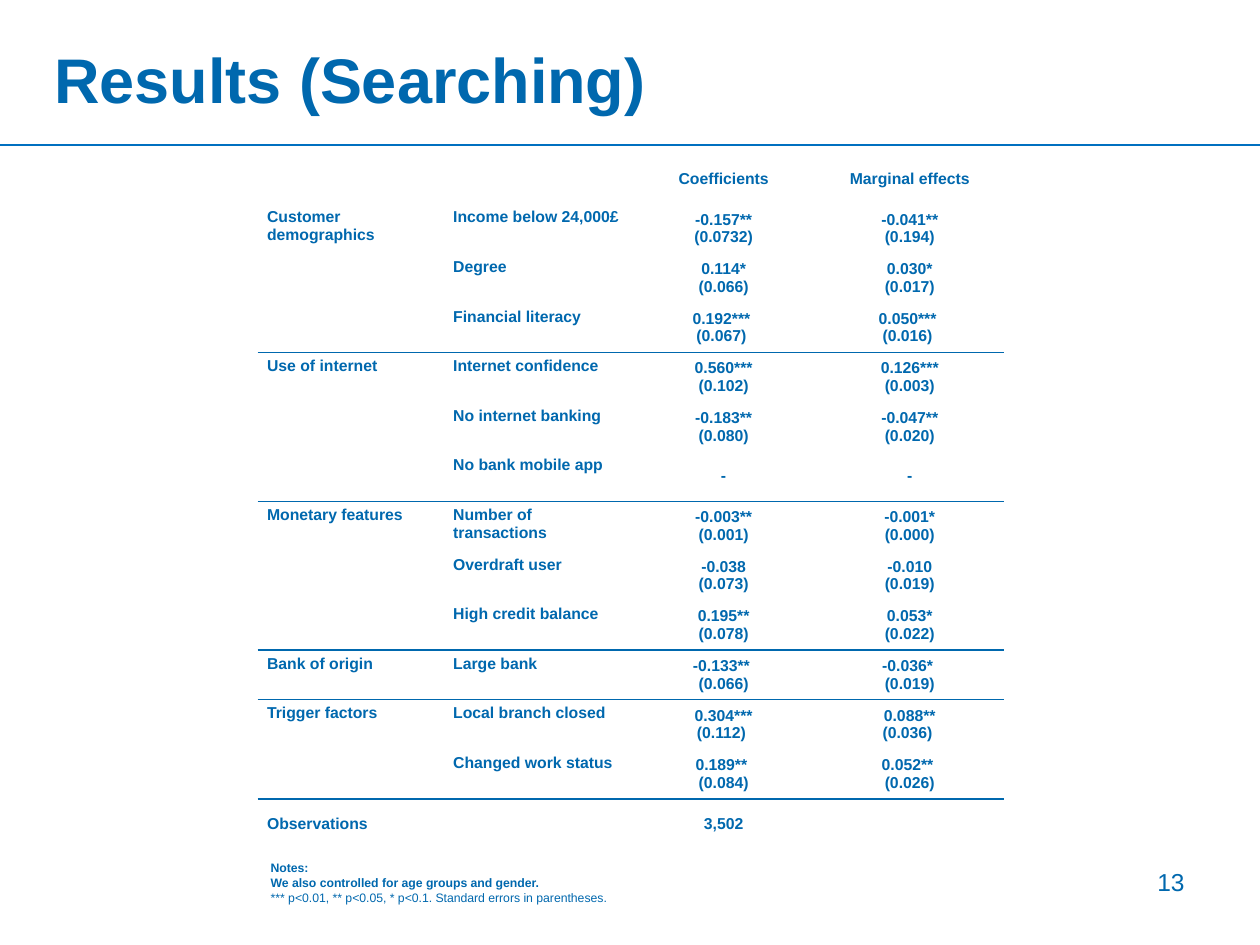
from itertools import accumulate

from lxml import etree
from pptx import Presentation
from pptx import util as u
from pptx.dml.color import RGBColor
from pptx.enum import shapes, text
from pptx.oxml import ns

BLUE = RGBColor(0x00, 0x68, 0xAE)
RULE = RGBColor(0x00, 0x70, 0xC0)
WHITE = RGBColor(0xFF, 0xFF, 0xFF)
FONT = "Arial"
WIDE, HIGH = u.Inches(10), u.Inches(7.5)
LEFT, MID, RIGHT = text.PP_ALIGN.LEFT, text.PP_ALIGN.CENTER, text.PP_ALIGN.RIGHT

HEADS = ["", "", "Coefficients", "Marginal effects"]
GROUPS = [
    ("Customer demographics", [
        ("Income below 24,000£", "-0.157**\n(0.0732)", "-0.041**\n(0.194)"),
        ("Degree", "0.114*\n(0.066)", "0.030*\n(0.017)"),
        ("Financial literacy", "0.192*** \n(0.067) ", "0.050*** \n(0.016) "),
    ]),
    ("Use of internet", [
        ("Internet confidence", "0.560***\n(0.102)", "0.126***\n(0.003)"),
        ("No internet banking", "-0.183**\n(0.080)", "-0.047**\n(0.020)"),
        ("No bank mobile app", "-", "-"),
    ]),
    ("Monetary features", [
        ("Number of transactions", "-0.003**\n(0.001)", "-0.001*\n(0.000)"),
        ("Overdraft user", "-0.038\n(0.073)", "-0.010\n(0.019)"),
        ("High credit balance", "0.195**\n(0.078)", "0.053*\n(0.022)"),
    ]),
    ("Bank of origin", [
        ("Large bank", "-0.133** \n(0.066)", "-0.036* \n(0.019)"),
    ]),
    ("Trigger factors", [
        ("Local branch closed", "0.304***\n(0.112) ", "0.088**\n(0.036) "),
        ("Changed work status", "0.189** \n(0.084)", "0.052** \n(0.026)"),
    ]),
    ("Observations", [("", "3,502", "")]),
]
NOTES = [
    "Notes:",
    "We also controlled for age groups and gender.",
    "*** p<0.01, ** p<0.05, * p<0.1. Standard errors in parentheses.",
]


def share(x, y, w, h):
    return int(x * WIDE), int(y * HIGH), int(w * WIDE), int(h * HIGH)


def style(frame, size, bold, align):
    for para in frame.paragraphs:
        para.alignment = align
        for run in para.runs:
            font = run.font
            font.name, font.size, font.bold = FONT, u.Pt(size), bold
            font.color.rgb = BLUE


def edge(cell, side, color):
    props = cell._tc.get_or_add_tcPr()
    line = etree.SubElement(props, ns.qn("a:ln" + side), w=str(u.Pt(1)))
    fill = etree.SubElement(line, ns.qn("a:solidFill"))
    etree.SubElement(fill, ns.qn("a:srgbClr"), val=str(color))


def add_title(slide, box):
    title = slide.shapes.title
    title.left, title.top, title.width, title.height = box
    frame = title.text_frame
    frame.text = "Results (Searching)"
    frame.vertical_anchor = text.MSO_ANCHOR.MIDDLE
    style(frame, 36, True, LEFT)


def add_rule(slide, y):
    line = slide.shapes.add_connector(
        shapes.MSO_CONNECTOR.STRAIGHT, 0, y, WIDE, y)
    line.line.color.rgb = RULE
    line.line.width = u.Pt(0.75)
    etree.SubElement(line._element.spPr, ns.qn("a:effectLst"))


def fill_cell(cell, words, mid, align, top, base):
    cell.margin_left = cell.margin_right = u.Inches(0.07)
    cell.margin_top = cell.margin_bottom = u.Inches(0.04)
    cell.vertical_anchor = (
        text.MSO_ANCHOR.MIDDLE if mid else text.MSO_ANCHOR.TOP)
    cell.text_frame.text = words
    style(cell.text_frame, 9, True, align)
    for side, color in zip("LRTB", (WHITE, WHITE, top, base)):
        edge(cell, side, color)
    cell.fill.solid()
    cell.fill.fore_color.rgb = WHITE


def add_grid(slide, box):
    rows = [HEADS]
    for name, items in GROUPS:
        for i, item in enumerate(items):
            rows.append(["" if i else name, *item])
    sizes = [len(items) for name, items in GROUPS]
    starts = list(accumulate(sizes[:-1], initial=1))
    ruled = starts[1:]

    table = slide.shapes.add_table(len(rows), len(HEADS), *box).table
    table.first_row = table.horz_banding = False
    for row in table.rows:
        row.height = box[3] // len(rows)
    for r, row in enumerate(rows):
        top = BLUE if r in ruled else WHITE
        base = BLUE if r + 1 in ruled else WHITE
        for c, words in enumerate(row):
            mid = c > 1 or r == len(rows) - 1
            align = MID if c > 1 else LEFT
            fill_cell(table.cell(r, c), words, mid, align, top, base)
    for start, size in zip(starts, sizes):
        if size > 1:
            table.cell(start, 0).merge(table.cell(start + size - 1, 0))


def add_text(slide, box, lines, size, align, bold):
    frame = slide.shapes.add_textbox(*box).text_frame
    frame.word_wrap = True
    frame.text = "\n".join(lines)
    style(frame, size, bold, align)
    return frame


def add_notes(slide, box):
    frame = add_text(slide, box, NOTES, 7, LEFT, True)
    frame.paragraphs[-1].runs[0].font.bold = False


def main():
    deck = Presentation()
    deck.slide_width, deck.slide_height = WIDE, HIGH
    slide = deck.slides.add_slide(deck.slide_layouts[5])
    add_rule(slide, u.Inches(1.15))
    add_grid(slide, share(0.205, 0.163, 0.591, 0.735))
    add_text(slide, share(0.717, 0.911, 0.233, 0.07), ["13"], 14, RIGHT, False)
    add_notes(slide, share(0.205, 0.904, 0.65, 0.076))
    add_title(slide, share(0.033, 0.039, 0.921, 0.087))
    deck.save("out.pptx")


if __name__ == "__main__":
    main()
